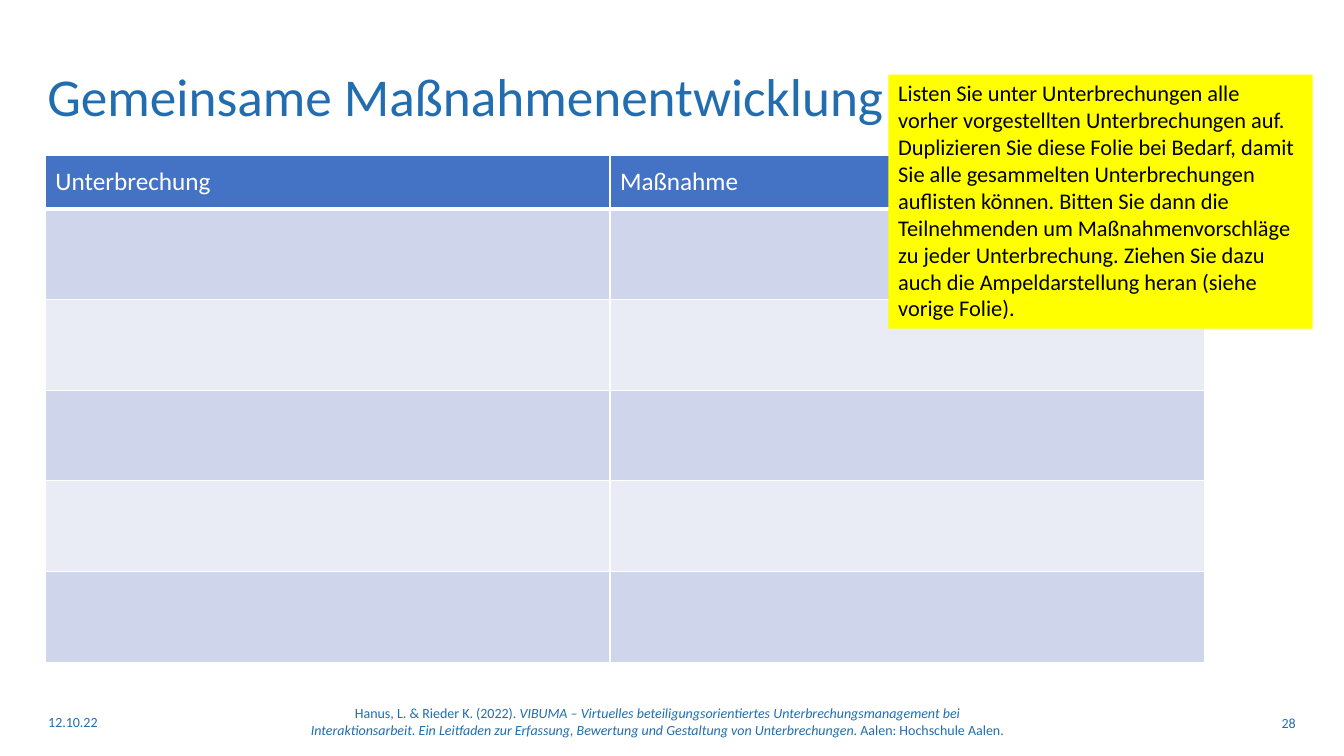
"""Build the slide with the table for jointly developing measures."""
from dataclasses import dataclass

from lxml import etree
from pptx import Presentation
from pptx import util as u
from pptx.dml.color import RGBColor
from pptx.enum import text
from pptx.oxml import ns


@dataclass(frozen=True)
class Theme:
    font: str = "Calibri"
    blue: str = "216DAF"
    header: str = "4472C4"
    bands: tuple = ("CFD5EA", "E9EBF5")
    white: str = "FFFFFF"
    black: str = "000000"
    yellow: str = "FFFF00"
    title_size: int = 38
    table_size: int = 18
    hint_size: int = 16
    footer_size: int = 10


theme = Theme()


def format_text(shape, size, color, align=text.PP_ALIGN.LEFT, anchor=text.MSO_ANCHOR.MIDDLE):
    frame = shape.text_frame
    frame.word_wrap = True
    frame.auto_size = text.MSO_AUTO_SIZE.NONE
    frame.vertical_anchor = anchor
    paragraph = frame.paragraphs[0]
    paragraph.alignment = align
    paragraph.font.name = theme.font
    paragraph.font.size = u.Pt(size)
    paragraph.font.color.rgb = RGBColor.from_string(color)
    return paragraph


def set_borders(cell, bottom_width):
    properties = cell._tc.get_or_add_tcPr()
    widths = {"a:lnL": 1, "a:lnR": 1, "a:lnT": 1, "a:lnB": bottom_width}
    for position, (tag, width) in enumerate(widths.items()):
        line = etree.Element(ns.qn(tag), w=str(u.Pt(width)))
        fill = etree.SubElement(line, ns.qn("a:solidFill"))
        etree.SubElement(fill, ns.qn("a:srgbClr"), val=theme.white)
        properties.insert(position, line)


presentation = Presentation()
presentation.slide_width = u.Inches(13.33)
presentation.slide_height = u.Inches(7.5)
slide = presentation.slides.add_slide(presentation.slide_layouts[5])

title = slide.shapes.title
title.left, title.top = u.Inches(0.37), u.Inches(0.58)
title.width, title.height = u.Inches(11.5), u.Inches(0.82)
title.text_frame.text = "Gemeinsame Maßnahmenentwicklung"
format_text(title, theme.title_size, theme.blue).line_spacing = 0.9

source = slide.shapes.add_textbox(u.Inches(2.89), u.Inches(6.99), u.Inches(7.26), u.Inches(0.33))
paragraph = format_text(source, theme.footer_size, theme.blue, text.PP_ALIGN.CENTER)
for wording, italic in (
    ("Hanus, L. & Rieder K. (2022). ", False),
    ("VIBUMA – Virtuelles beteiligungsorientiertes Unterbrechungsmanagement bei "
     "Interaktionsarbeit. Ein Leitfaden zur Erfassung, Bewertung und Gestaltung von "
     "Unterbrechungen. ", True),
    ("Aalen: Hochschule Aalen.", False),
):
    run = paragraph.add_run()
    run.text = wording
    run.font.italic = italic

headings = ("Unterbrechung", "Maßnahme")
table = slide.shapes.add_table(
    6, 2, u.Inches(0.45), u.Inches(1.54), u.Inches(11.5), u.Inches(5.03)).table
for column, width in zip(table.columns, (5.6, 5.9)):
    column.width = u.Inches(width)
for row_index, row in enumerate(table.rows):
    is_header = row_index == 0
    row.height = u.Inches(0.53 if is_header else 0.9)
    color = theme.header if is_header else theme.bands[(row_index - 1) % 2]
    for column_index, cell in enumerate(row.cells):
        cell.fill.solid()
        cell.fill.fore_color.rgb = RGBColor.from_string(color)
        set_borders(cell, 3 if is_header else 1)
        if is_header:
            cell.text = headings[column_index]
            cell.vertical_anchor = text.MSO_ANCHOR.MIDDLE
            font = cell.text_frame.paragraphs[0].font
            font.name = theme.font
            font.size = u.Pt(theme.table_size)
            font.bold = False
            font.color.rgb = RGBColor.from_string(theme.white)

for wording, left, top, width, align in (
    ("12.10.22", 0.38, 6.96, 2.36, text.PP_ALIGN.LEFT),
    ("28", 10.24, 6.97, 2.71, text.PP_ALIGN.RIGHT),
):
    footer = slide.shapes.add_textbox(
        u.Inches(left), u.Inches(top), u.Inches(width), u.Inches(0.4))
    footer.text_frame.text = wording
    format_text(footer, theme.footer_size, theme.blue, align)

hint = slide.shapes.add_textbox(u.Inches(8.81), u.Inches(0.74), u.Inches(4.21), u.Inches(2.52))
hint.fill.solid()
hint.fill.fore_color.rgb = RGBColor.from_string(theme.yellow)
hint.text_frame.text = (
    "Listen Sie unter Unterbrechungen alle vorher vorgestellten Unterbrechungen auf. "
    "Duplizieren Sie diese Folie bei Bedarf, damit Sie alle gesammelten Unterbrechungen "
    "auflisten können. Bitten Sie dann die Teilnehmenden um Maßnahmenvorschläge zu jeder "
    "Unterbrechung. Ziehen Sie dazu auch die Ampeldarstellung heran (siehe vorige Folie)."
)
format_text(hint, theme.hint_size, theme.black, anchor=text.MSO_ANCHOR.TOP)
hint.text_frame.auto_size = text.MSO_AUTO_SIZE.SHAPE_TO_FIT_TEXT

presentation.save("out.pptx")
